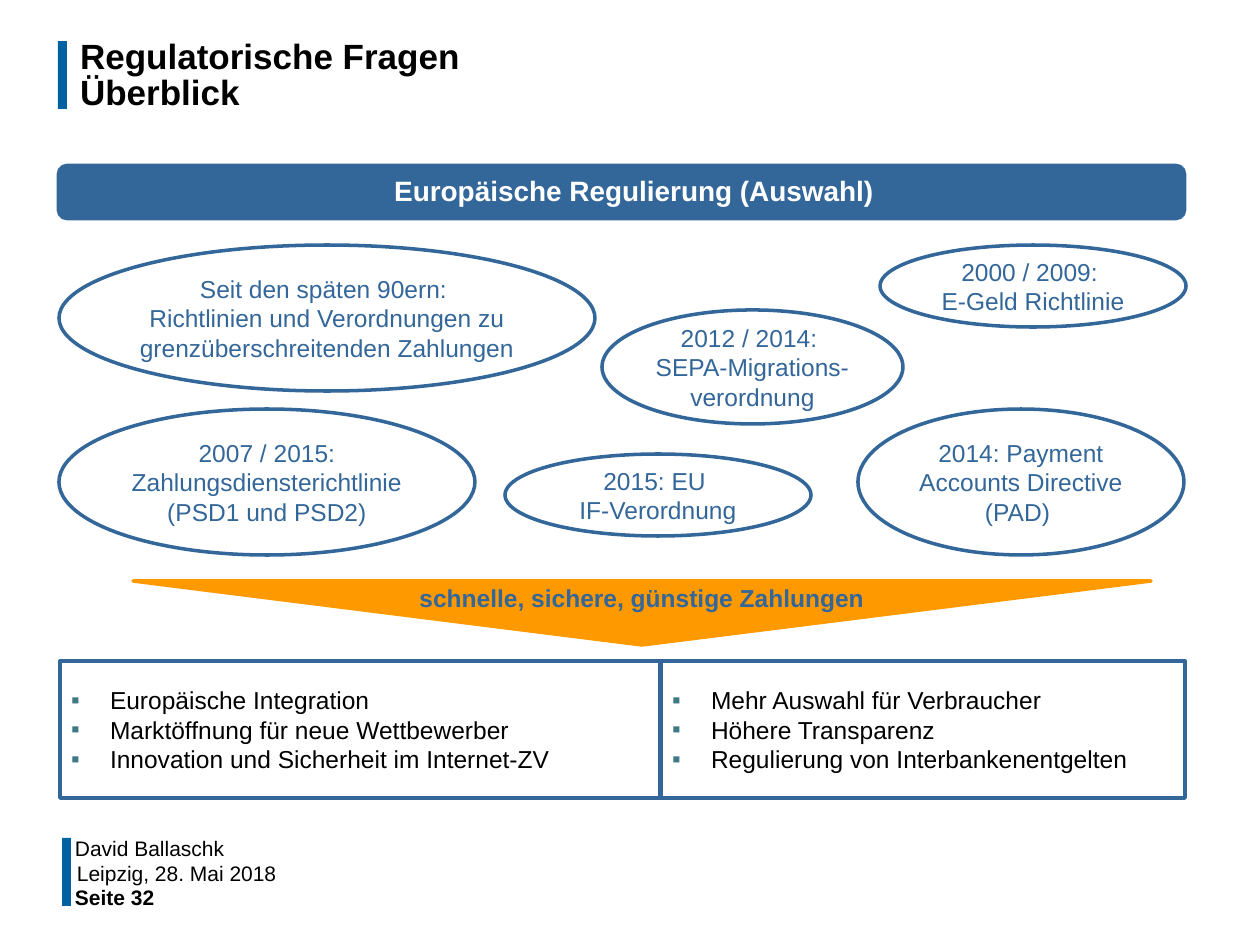
from copy import deepcopy

from lxml.etree import SubElement
from pptx import Presentation
from pptx.dml.color import RGBColor
from pptx.enum.shapes import MSO_SHAPE
from pptx.enum.text import MSO_ANCHOR, PP_ALIGN
from pptx.oxml.ns import qn
from pptx.util import Emu, Pt

PIXELS_PER_INCH = 126
BLUE = "336699"
BAR_BLUE = "0062A1"
ORANGE = "FF9900"
BULLET_TEAL = "3F7986"
WHITE = "FFFFFF"
BLACK = "000000"

DIRECTIVES = [
    ("2007 / 2015: Zahlungsdiensterichtlinie (PSD1 und PSD2)", (59, 409, 416, 146)),
    ("2000 / 2009: \nE-Geld Richtlinie", (880, 245, 306, 82)),
    ("Seit den späten 90ern: \nRichtlinien und Verordnungen zu grenzüberschreitenden Zahlungen",
     (59, 245, 536, 146)),
    ("2012 / 2014: \nSEPA-Migrations-\nverordnung", (602, 310, 301, 114)),
    ("2015: EU \nIF-Verordnung", (505, 454, 306, 82)),
    ("2014: Payment Accounts Directive (PAD) ", (858, 409, 326, 146)),
]
GOALS = [
    (["Europäische Integration", "Marktöffnung für neue Wettbewerber",
      "Innovation und Sicherheit im Internet-ZV"], (60, 661, 600, 137)),
    (["Mehr Auswahl für Verbraucher", "Höhere Transparenz",
      "Regulierung von Interbankenentgelten"], (661, 661, 524, 137)),
]
FOOTER = [
    ("David Ballaschk", (64, 837, 1119, 23), False),
    ("Leipzig, 28. Mai 2018", (66, 862, 291, 23), False),
    ("Seite 32", (64, 886, 291, 23), True),
]


def px(value):
    return Emu(round(value * 914400 / PIXELS_PER_INCH))


def color(value):
    return RGBColor.from_string(value)


def place(shape, box):
    shape.left, shape.top, shape.width, shape.height = map(px, box)


def write(shape, text, size=14, font_color=BLACK, bold=False, align=PP_ALIGN.LEFT,
          anchor=MSO_ANCHOR.MIDDLE, insets=(11, 5), line_spacing=None, indent=0, bullet=None):
    frame = shape.text_frame
    frame.word_wrap = True
    frame.vertical_anchor = anchor
    frame.margin_left = frame.margin_right = px(insets[0])
    frame.margin_top = frame.margin_bottom = px(insets[1])
    lines = [text] if isinstance(text, str) else text
    for index, line in enumerate(lines):
        paragraph = frame.add_paragraph() if index else frame.paragraphs[0]
        paragraph.text = line
        paragraph.alignment = align
        paragraph.space_before = paragraph.space_after = Pt(0)
        if line_spacing:
            paragraph.line_spacing = line_spacing
        for run in paragraph.runs:
            run.font.name = "Arial"
            run.font.size = Pt(size)
            run.font.bold = bold
            run.font.color.rgb = color(font_color)
        for line_break in paragraph._p.findall(qn("a:br")):
            line_break.insert(0, deepcopy(paragraph.runs[0]._r.rPr))
        properties = paragraph._p.get_or_add_pPr()
        properties.set("marL", str(px(indent)))
        properties.set("indent", str(-px(indent) if bullet else 0))
        if bullet:
            bullet_color = SubElement(properties, qn("a:buClr"))
            SubElement(bullet_color, qn("a:srgbClr"), val=BULLET_TEAL)
            SubElement(properties, qn("a:buFont"), typeface="Arial")
            SubElement(properties, qn("a:buChar"), char=bullet)


def add_shape(slide, kind, box, fill=None, line=None, line_width=2.0):
    shape = slide.shapes.add_shape(kind, *map(px, box))
    shape.shadow.inherit = False
    if fill:
        shape.fill.solid()
        shape.fill.fore_color.rgb = color(fill)
    else:
        shape.fill.background()
    if line:
        shape.line.color.rgb = color(line)
        shape.line.width = Pt(line_width)
    else:
        shape.line.fill.background()
    return shape


def add_text(slide, text, box, **text_format):
    write(slide.shapes.add_textbox(*map(px, box)), text, **text_format)


def add_title(slide, text):
    title = slide.shapes.title
    place(title, (67, 35, 1118, 89))
    write(title, text, size=20, bold=True, anchor=MSO_ANCHOR.TOP,
          insets=(13, 6), line_spacing=Pt(20.4))


def add_header(slide, text):
    header = add_shape(slide, MSO_SHAPE.ROUNDED_RECTANGLE, (58, 165, 1127, 54), BLUE, BLUE, 1.5)
    write(header, text, size=16, font_color=WHITE, bold=True,
          align=PP_ALIGN.CENTER, line_spacing=0.9, indent=25)


def add_directive(slide, text, box):
    ellipse = add_shape(slide, MSO_SHAPE.OVAL, box, WHITE, BLUE)
    write(ellipse, text, font_color=BLUE, align=PP_ALIGN.CENTER, insets=(0, 5))


def add_goals(slide, goals, box):
    panel = add_shape(slide, MSO_SHAPE.RECTANGLE, box, line=BLUE, line_width=2.25)
    write(panel, goals, indent=39, bullet="▪")


def add_result(slide, text):
    triangle = add_shape(slide, MSO_SHAPE.ISOSCELES_TRIANGLE, (133, 581, 1018, 64), ORANGE, ORANGE)
    triangle.rotation = 180
    add_text(slide, text, (329, 562, 626, 71), font_color=BLUE, bold=True,
             align=PP_ALIGN.CENTER)


def main():
    presentation = Presentation()
    presentation.slide_width = px(1260)
    presentation.slide_height = px(945)
    slide = presentation.slides.add_slide(presentation.slide_layouts[5])
    for left, top in [(58, 41), (62, 838)]:
        add_shape(slide, MSO_SHAPE.RECTANGLE, (left, top, 9, 68), BAR_BLUE)
    add_title(slide, "Regulatorische Fragen\nÜberblick")
    add_header(slide, "Europäische Regulierung (Auswahl)")
    for goals, box in GOALS:
        add_goals(slide, goals, box)
    for text, box in DIRECTIVES:
        add_directive(slide, text, box)
    add_result(slide, "schnelle, sichere, günstige Zahlungen")
    for text, box, bold in FOOTER:
        add_text(slide, text, box, size=12, bold=bold)
    presentation.save("out.pptx")


if __name__ == "__main__":
    main()
